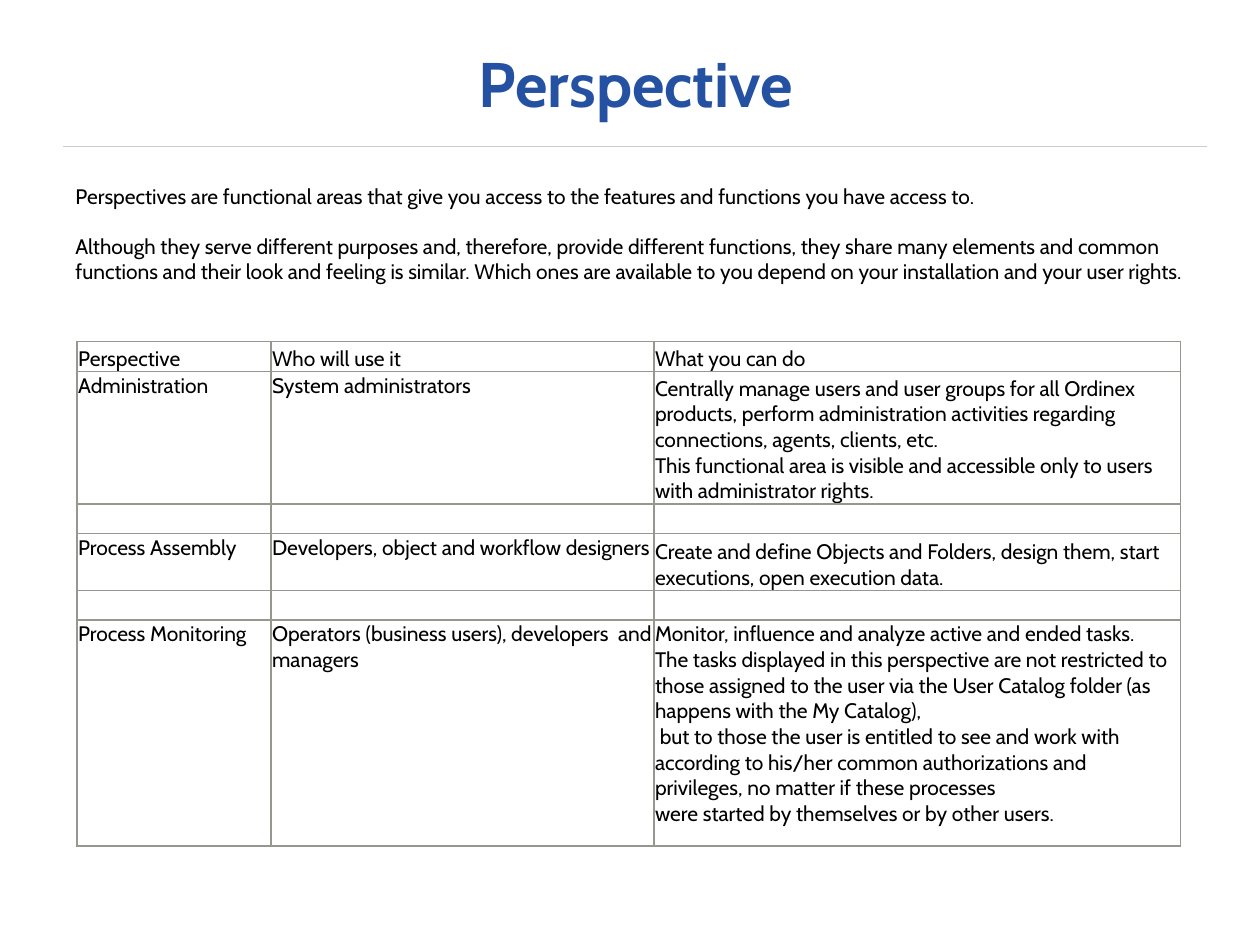
from lxml.etree import SubElement
from pptx import Presentation
from pptx.dml.color import RGBColor
from pptx.enum.shapes import MSO_CONNECTOR
from pptx.enum.text import MSO_ANCHOR as Anchor, PP_ALIGN as Align
from pptx.oxml.ns import qn
from pptx.util import Inches, Pt

COLORS = {"title": "2551A3", "text": "000000", "rule": "CCCCCC", "grid": "969890", "page": "FFFFFF"}
FONT = "Cabin"

deck = Presentation()
deck.slide_width, deck.slide_height = Inches(10), Inches(7.5)
page = deck.slides.add_slide(deck.slide_layouts[6])
column, row = deck.slide_width / 100, deck.slide_height / 100


def place(left, top, width, height):
    return int(left * column), int(top * row), int(width * column), int(height * row)


def write(para, text, size=12, color="text", bold=False):
    para.text = text
    for span in para.runs:
        for name, value in {"name": FONT, "size": Pt(size), "bold": bold}.items():
            setattr(span.font, name, value)
        span.font.color.rgb = RGBColor.from_string(COLORS[color])


left, top, right, bottom = place(5, 15.47, 95.8, 15.47)
rule = page.shapes.add_connector(MSO_CONNECTOR.STRAIGHT, left, top, right, bottom)
rule.line.color.rgb = RGBColor.from_string(COLORS["rule"])
rule.line.width = Pt(0.75)
SubElement(rule._element.spPr, qn("a:effectLst"))

title = page.shapes.add_textbox(*place(5, 3.47, 90.9, 10.53)).text_frame
title_format = {
    "word_wrap": True,
    "vertical_anchor": Anchor.MIDDLE,
    "margin_top": Inches(0.1),
    "margin_bottom": Inches(0.1),
}
for name, value in title_format.items():
    setattr(title, name, value)
write(title.paragraphs[0], "Perspective", 36, "title", True)
title.paragraphs[0].alignment = Align.CENTER

intro = page.shapes.add_textbox(*place(5, 18.8, 90.9, 14.27)).text_frame
intro.word_wrap = True
write(
    intro.paragraphs[0],
    "Perspectives are functional areas that give you access to the features and functions you have access to.",
)
detail = intro.add_paragraph()
detail.space_before = Pt(14)
write(
    detail,
    "Although they serve different purposes and, therefore, provide different functions, they share many "
    "elements and common functions and their look and feeling is similar. Which ones are available to you "
    "depend on your installation and your user rights.",
)

EMPTY = ("", "", "")
ROWS = [
    (3.2, ("Perspective", "Who will use it", "What you can do")),
    (14, (
        "Administration",
        "System administrators",
        "Centrally manage users and user groups for all Ordinex products, perform administration activities "
        "regarding connections, agents, clients, etc.\n"
        "This functional area is visible and accessible only to users with administrator rights.",
    )),
    (3.15, EMPTY),
    (6, (
        "Process Assembly",
        "Developers, object and workflow designers",
        "Create and define Objects and Folders, design them, start executions, open execution data.",
    )),
    (3.15, EMPTY),
    (23.9, (
        "Process Monitoring",
        "Operators (business users), developers  and managers",
        "Monitor, influence and analyze active and ended tasks.\n"
        "The tasks displayed in this perspective are not restricted to those assigned to the user via the "
        "User Catalog folder (as happens with the My Catalog),\n"
        " but to those the user is entitled to see and work with according to his/her common authorizations "
        "and privileges, no matter if these processes\n"
        "were started by themselves or by other users.",
    )),
]
WIDTHS = [15.4, 30.4, 41.8]
BOTTOM_CELLS = {(0, 0), (0, 1), (0, 2), (1, 2), (3, 2)}
CELL_MARGINS = {
    "margin_left": Inches(0.01),
    "margin_right": Inches(0.01),
    "margin_top": Inches(0.01),
    "margin_bottom": 0,
}

area = place(6.1, 36.13, sum(WIDTHS), sum(height for height, _ in ROWS))
table = page.shapes.add_table(len(ROWS), len(WIDTHS), *area).table
table.first_row = table.horz_banding = False
for index, width in enumerate(WIDTHS):
    table.columns[index].width = int(width * column)

for row_index, (height, texts) in enumerate(ROWS):
    table.rows[row_index].height = int(height * row)
    for column_index, text in enumerate(texts):
        cell = table.cell(row_index, column_index)
        for name, value in CELL_MARGINS.items():
            setattr(cell, name, value)
        at_bottom = (row_index, column_index) in BOTTOM_CELLS
        cell.vertical_anchor = Anchor.BOTTOM if at_bottom else Anchor.TOP
        para = cell.text_frame.paragraphs[0]
        write(para, text)
        if not text:
            SubElement(para._p, qn("a:endParaRPr"), sz="1200")
        properties = cell._tc.get_or_add_tcPr()
        for side in ("lnL", "lnR", "lnT", "lnB"):
            border = SubElement(properties, qn(f"a:{side}"), w=str(Pt(1)))
            SubElement(SubElement(border, qn("a:solidFill")), qn("a:srgbClr"), val=COLORS["grid"])
        cell.fill.solid()
        cell.fill.fore_color.rgb = RGBColor.from_string(COLORS["page"])

deck.save("out.pptx")
